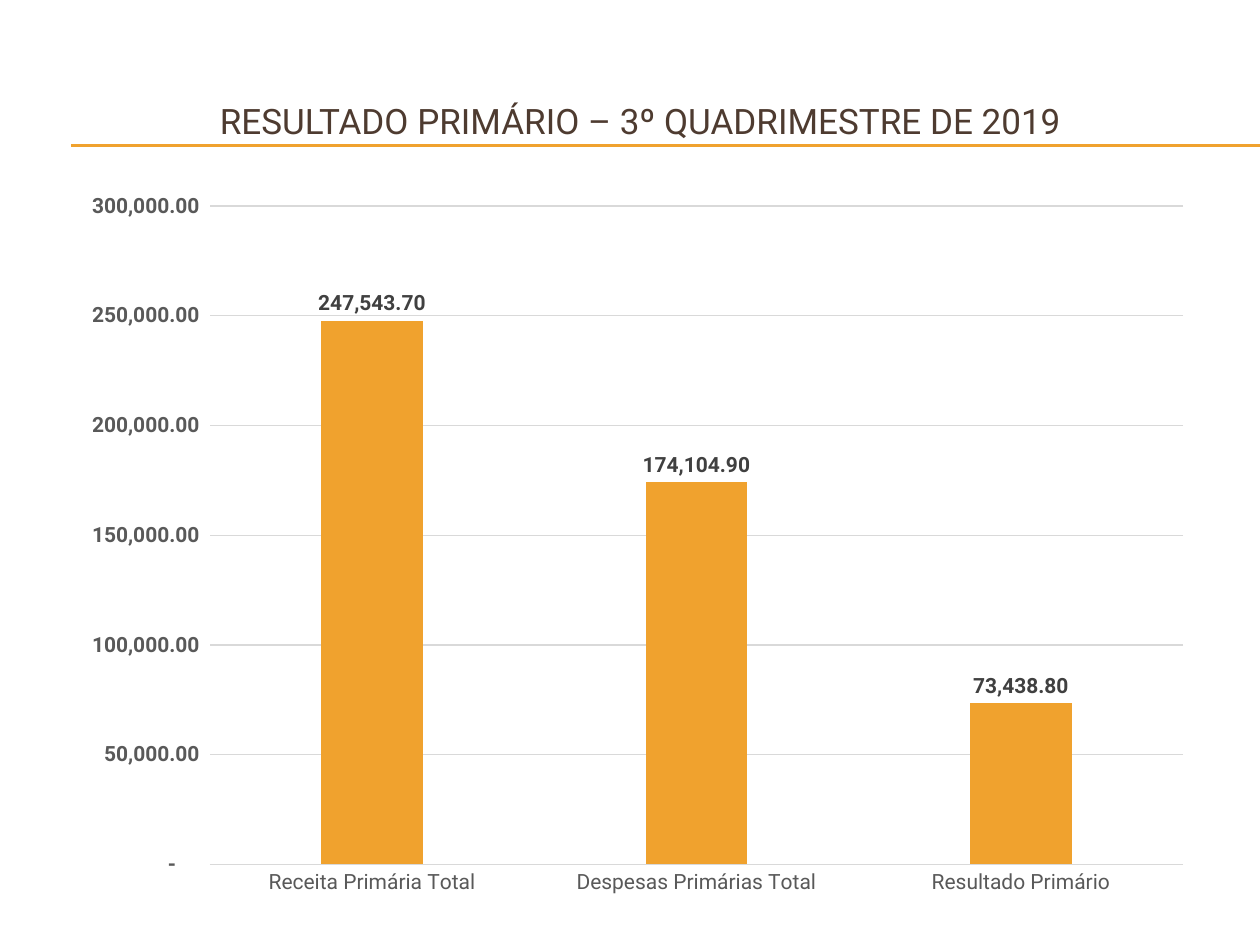
from lxml import etree
from pptx import Presentation, util as u
from pptx.chart.data import CategoryChartData
from pptx.dml.color import RGBColor
from pptx.enum import chart as ch, shapes, text
from pptx.oxml.ns import qn

PX = u.Inches(1) / 126
GOLD = RGBColor(0xF0, 0xA2, 0x2E)
BROWN = RGBColor(0x4E, 0x3B, 0x30)
GRAY = RGBColor(0x59, 0x59, 0x59)
DARK = RGBColor(0x40, 0x40, 0x40)
PALE = RGBColor(0xD9, 0xD9, 0xD9)
MONEY = '_(* #,##0.00_);_(* \\(#,##0.00\\);_(* "-"??_);_(@_)'


def px(*vals):
    return [round(v * PX) for v in vals]


def put(frame, words, size, color, align=text.PP_ALIGN.CENTER):
    frame.word_wrap = True
    frame.vertical_anchor = text.MSO_ANCHOR.MIDDLE
    para = frame.paragraphs[0]
    para.alignment = align
    run = para.add_run()
    run.text = words
    run.font.name = "Roboto"
    run.font.size = u.Pt(size)
    run.font.color.rgb = color


prs = Presentation()
prs.slide_width, prs.slide_height = px(1260, 945)
slide = prs.slides.add_slide(prs.slide_layouts[6])

# Rules under the title
for y in (145, 146):
    rule = slide.shapes.add_connector(
        shapes.MSO_CONNECTOR.STRAIGHT, *px(71, y, 1260, y))
    rule.line.color.rgb = GOLD
    rule.line.width = u.Pt(0.75)
    etree.SubElement(rule._element.spPr, qn("a:effectLst"))

# Title
title = slide.shapes.add_textbox(*px(42, 63, 1197, 116))
put(title.text_frame, "RESULTADO PRIMÁRIO – 3º QUADRIMESTRE DE 2019",
    size=20, color=BROWN)

# Chart
data = CategoryChartData(number_format=MONEY)
data.categories = ["Receita Primária Total", "Despesas Primárias Total",
                   "Resultado Primário"]
data.add_series("Series 1", (247543.7, 174104.9, 73438.8))
chart = slide.shapes.add_chart(
    ch.XL_CHART_TYPE.COLUMN_CLUSTERED, *px(64, 179, 1142, 730), data).chart
chart.has_legend = False
chart.has_title = False
chart.font.name = "Roboto"
chart.font.size = u.Pt(10)

# Columns
plot = chart.plots[0]
plot.gap_width = 219
plot.overlap = -27
plot.vary_by_categories = False
fill = plot.series[0].format.fill
fill.solid()
fill.fore_color.rgb = GOLD

# Value labels
plot.has_data_labels = True
tags = plot.data_labels
tags.show_value = True
tags.position = ch.XL_LABEL_POSITION.OUTSIDE_END

# Axes
cat, val = chart.category_axis, chart.value_axis
for axis in (cat, val):
    axis.major_tick_mark = axis.minor_tick_mark = ch.XL_TICK_MARK.NONE
val.minimum_scale, val.maximum_scale, val.major_unit = 0, 300000, 50000
val.format.line.fill.background()
for line in (cat.format.line, val.major_gridlines.format.line):
    line.color.rgb = PALE
    line.width = u.Pt(0.75)

# Chart text
for part, color, bold in ((cat.tick_labels, GRAY, False),
                          (val.tick_labels, GRAY, True),
                          (tags, DARK, True)):
    part.font.name = "Roboto"
    part.font.size = u.Pt(12)
    part.font.bold = bold
    part.font.color.rgb = color
for part in (val.tick_labels, tags):
    part.number_format = MONEY
    part.number_format_is_linked = False

prs.save("out.pptx")
